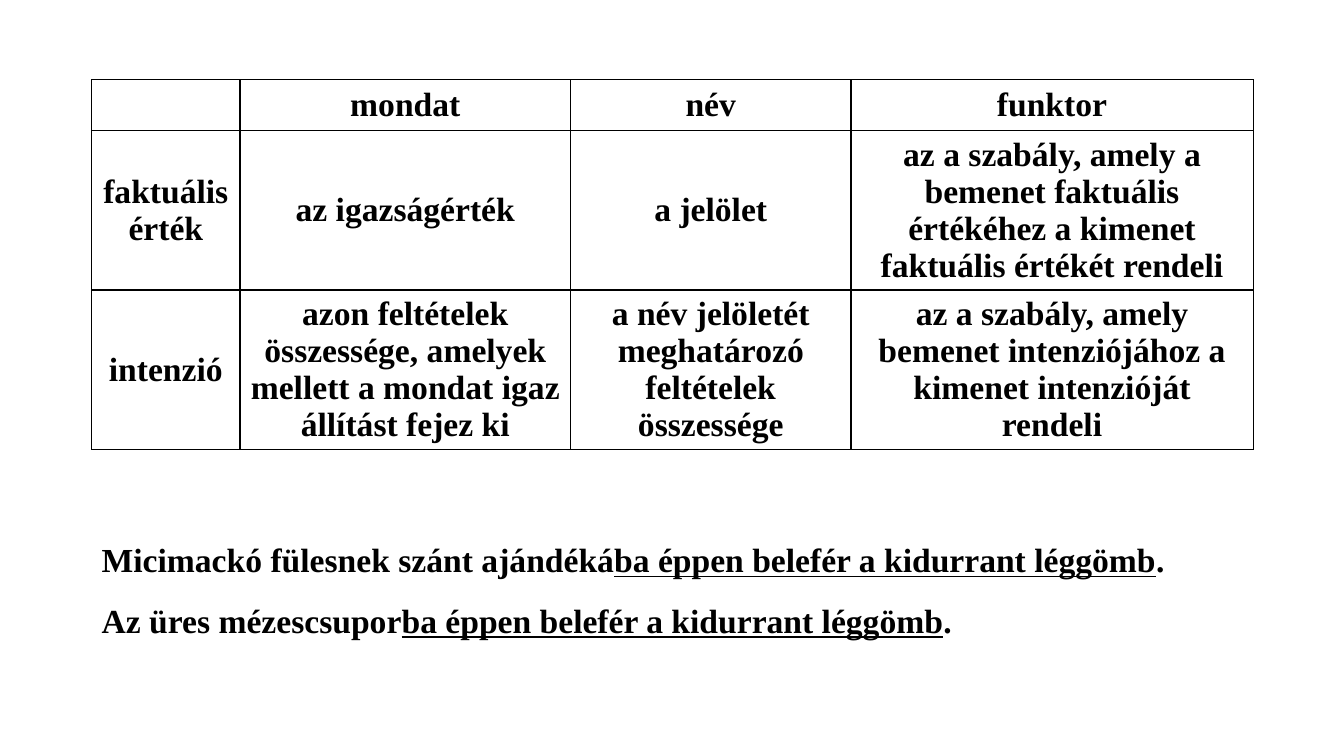
from lxml.etree import SubElement
from pptx import Presentation
from pptx.dml.color import RGBColor
from pptx.enum.text import MSO_ANCHOR, MSO_AUTO_SIZE, PP_ALIGN
from pptx.oxml.ns import qn
from pptx.util import Inches, Pt

HEADINGS = ["", "mondat", "név", "funktor"]
FACTUAL_VALUE = [
    "faktuális érték",
    "az igazságérték",
    "a jelölet",
    "az a szabály, amely a bemenet faktuális értékéhez a kimenet faktuális értékét rendeli",
]
INTENSION = [
    "intenzió",
    "azon feltételek összessége, amelyek mellett a mondat igaz állítást fejez ki",
    "a név jelöletét meghatározó feltételek összessége",
    "az a szabály, amely bemenet intenziójához a kimenet intenzióját rendeli",
]
ROWS = [HEADINGS, FACTUAL_VALUE, INTENSION]
SUBJECTS = ["Micimackó fülesnek szánt ajándéká", "Az üres mézescsupor"]
PREDICATE = "ba éppen belefér a kidurrant léggömb"

COLUMN_WIDTHS = [1.47, 3.28, 2.78, 3.99]
ROW_HEIGHTS = [0.47, 1.58, 1.58]
LEFT, TABLE_TOP, EXAMPLES_TOP = 0.91, 0.79, 5.1
EXAMPLES_HEIGHT = 1.24
WIDTH = sum(COLUMN_WIDTHS)
FONT = "Times New Roman"
SIZE = Pt(24)
BLACK = RGBColor(0, 0, 0)


def add_span(para, text, underline=False):
    span = para.add_run()
    span.text = text
    span.font.name = FONT
    span.font.size = SIZE
    span.font.bold = True
    span.font.underline = underline
    span.font.color.rgb = BLACK


def add_borders(cell):
    properties = cell._tc.get_or_add_tcPr()
    for position, side in enumerate(("lnL", "lnR", "lnT", "lnB")):
        line = SubElement(properties, qn(f"a:{side}"), w=str(Pt(1)))
        fill = SubElement(line, qn("a:solidFill"))
        SubElement(fill, qn("a:srgbClr"), val=str(BLACK))
        properties.remove(line)
        properties.insert(position, line)


def add_values_table(page):
    table = page.shapes.add_table(
        len(ROWS), len(COLUMN_WIDTHS), Inches(LEFT), Inches(TABLE_TOP),
        Inches(WIDTH), Inches(sum(ROW_HEIGHTS)),
    ).table
    table.first_row = False
    table.horz_banding = False
    for column, width in zip(table.columns, COLUMN_WIDTHS):
        column.width = Inches(width)
    for row, height, texts in zip(table.rows, ROW_HEIGHTS, ROWS):
        row.height = Inches(height)
        for cell, text in zip(row.cells, texts):
            cell.fill.background()
            cell.vertical_anchor = MSO_ANCHOR.MIDDLE
            add_borders(cell)
            para = cell.text_frame.paragraphs[0]
            para.alignment = PP_ALIGN.CENTER
            para.font.size = SIZE
            if text:
                add_span(para, text)


def add_examples(page):
    box = page.shapes.add_textbox(
        Inches(LEFT), Inches(EXAMPLES_TOP), Inches(WIDTH), Inches(EXAMPLES_HEIGHT)
    )
    frame = box.text_frame
    frame.word_wrap = True
    frame.auto_size = MSO_AUTO_SIZE.SHAPE_TO_FIT_TEXT
    for index, subject in enumerate(SUBJECTS):
        para = frame.add_paragraph() if index else frame.paragraphs[0]
        para.alignment = PP_ALIGN.JUSTIFY
        para.line_spacing = 1.5
        add_span(para, subject)
        add_span(para, PREDICATE, underline=True)
        add_span(para, ".")


def main():
    deck = Presentation()
    deck.slide_width = Inches(13.33)
    deck.slide_height = Inches(7.5)
    page = deck.slides.add_slide(deck.slide_layouts[6])
    add_values_table(page)
    add_examples(page)
    deck.save("out.pptx")


if __name__ == "__main__":
    main()
